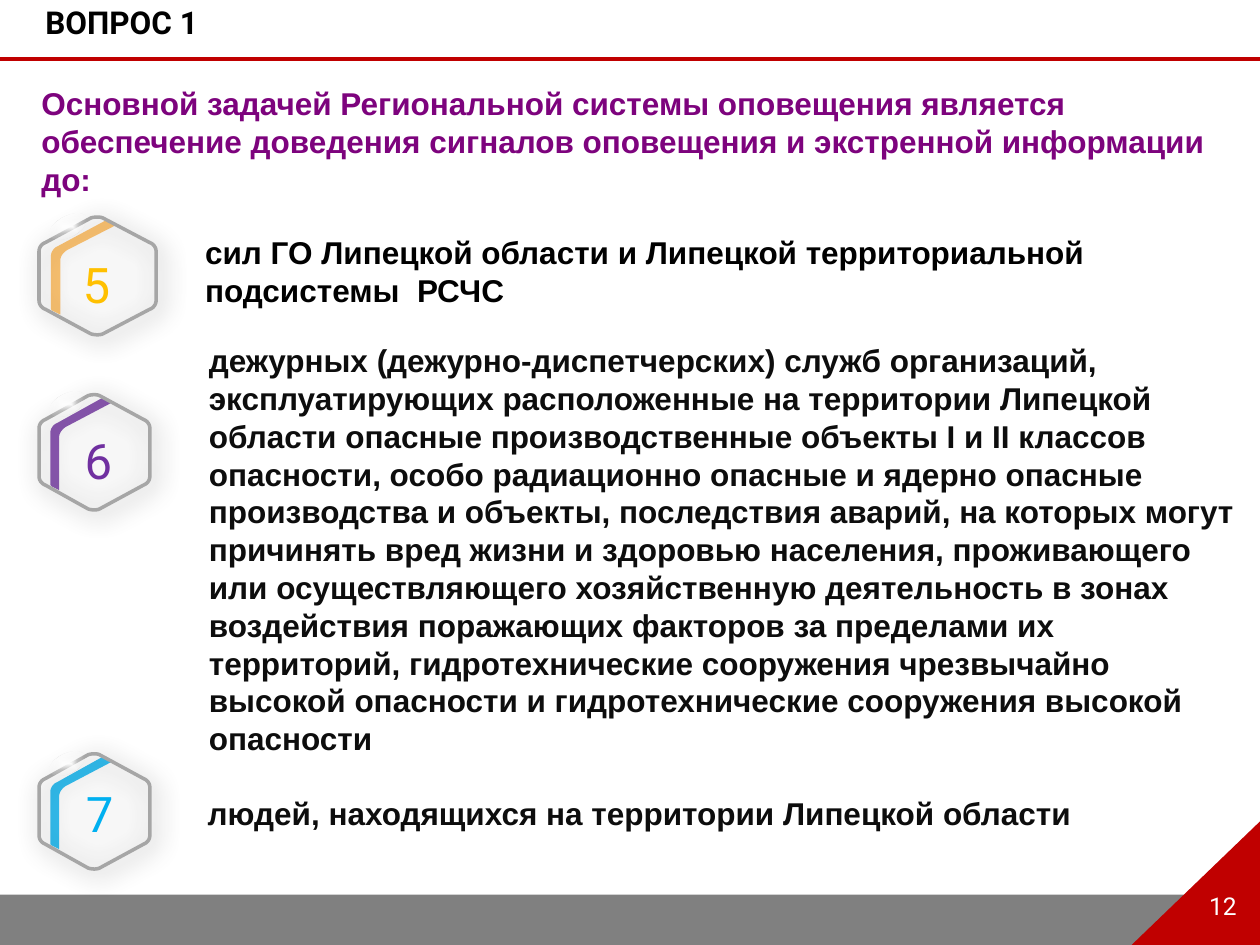
from dataclasses import dataclass
from typing import Any

from pptx import Presentation
from pptx.dml.color import RGBColor as RGB
from pptx.enum.shapes import MSO_CONNECTOR as CONNECTOR, MSO_SHAPE as SHAPE
from pptx.enum.text import MSO_AUTO_SIZE as AUTO_SIZE, PP_ALIGN as ALIGN
from pptx.oxml import parse_xml
from pptx.oxml.ns import nsdecls, qn
from pptx.util import Inches, Pt

COLORS = {
    "white": "FFFFFF", "black": "000000", "ink": "0D0D0D", "grey": "808080",
    "outline": "A6A6A6", "red": "C00000", "heading": "7D037D",
    "orange": "FFB850", "amber": "FFC000", "violet": "7030A0", "blue": "00B0F0",
}
BADGE_WIDTH, BADGE_HEIGHT = 0.88, 0.92
HEXAGON = [
    [(0.88, 0.65), (0.88, 0.68), (0.86, 0.71), (0.83, 0.72)],
    [(0.48, 0.91), (0.46, 0.92), (0.42, 0.92), (0.39, 0.91)],
    [(0.05, 0.72), (0.02, 0.71), (0, 0.68), (0, 0.65)],
    [(0, 0.27), (0, 0.24), (0.02, 0.21), (0.05, 0.2)],
    [(0.39, 0.01), (0.42, 0), (0.46, 0), (0.48, 0.01)],
    [(0.83, 0.2), (0.86, 0.21), (0.88, 0.24), (0.88, 0.27)],
]
RIBBON = [
    [(0.52, 0.02)], [(0.59, 0.06)], [(0.57, 0.07)],
    [(0.21, 0.26), (0.18, 0.28), (0.16, 0.31), (0.16, 0.34)],
    [(0.16, 0.76)], [(0.1, 0.73)], [(0.09, 0.72)],
    [(0.09, 0.3), (0.09, 0.28), (0.11, 0.24), (0.14, 0.23)],
    [(0.5, 0.03)],
]
GLOSS_STOPS = [(0, 100), (35, 30), (72, 2), (100, 0)]


def trace(pieces, steps=6):
    """Turn single points and four-point Bezier corners into one list of points."""
    points = []
    for piece in pieces:
        if len(piece) == 1:
            points += piece
            continue
        for step in range(steps + 1):
            t = step / steps
            weights = [(1 - t) ** 3, 3 * t * (1 - t) ** 2, 3 * t * t * (1 - t), t ** 3]
            points.append(tuple(sum(w * point[axis] for w, point in zip(weights, piece))
                                for axis in (0, 1)))
    return points


@dataclass
class Painter:
    """Holds the style and the current page, and draws each kind of element."""
    page: Any
    body_font: str = "Arial"
    label_font: str = "Roboto"
    size: float = 18

    def paint(self, shape, color, alpha=None, outline=None):
        shape.shadow.inherit = False
        shape.fill.solid()
        shape.fill.fore_color.rgb = RGB.from_string(COLORS[color])
        if alpha is not None:
            tint = shape._element.spPr.find(qn("a:solidFill"))[0]
            tint.append(parse_xml(f'<a:alpha {nsdecls("a")} val="{alpha * 1000}"/>'))
        if outline:
            shape.line.color.rgb = RGB.from_string(COLORS[outline])
            shape.line.width = Pt(2)
        else:
            shape.line.fill.background()
        return shape

    def bar(self, left, top, width, height, color):
        box = self.page.shapes.add_shape(
            SHAPE.RECTANGLE, Inches(left), Inches(top), Inches(width), Inches(height))
        return self.paint(box, color)

    def outline(self, points, color, **style):
        corners = [(Inches(x), Inches(y)) for x, y in points]
        builder = self.page.shapes.build_freeform(*corners[0])
        builder.add_line_segments(corners[1:], close=True)
        return self.paint(builder.convert_to_shape(), color, **style)

    def rule(self, left, top, right, color, width):
        line = self.page.shapes.add_connector(
            CONNECTOR.STRAIGHT, Inches(left), Inches(top), Inches(right), Inches(top))
        line.line.color.rgb = RGB.from_string(COLORS[color])
        line.line.width = Pt(width)
        line._element.spPr.append(parse_xml(f'<a:effectLst {nsdecls("a")}/>'))

    def text(self, words, left, top, width, height, color, font=None, size=None,
             bold=True, align=None, margins=None, spacing=None):
        box = self.page.shapes.add_textbox(
            Inches(left), Inches(top), Inches(width), Inches(height))
        frame = box.text_frame
        frame.word_wrap = True
        frame.auto_size = AUTO_SIZE.SHAPE_TO_FIT_TEXT
        if margins:
            (frame.margin_left, frame.margin_top,
             frame.margin_right, frame.margin_bottom) = map(Inches, margins)
        para = frame.paragraphs[0]
        para.text = words
        para.alignment = align
        if spacing:
            para.line_spacing = Pt(spacing)
        para.font.name = font or self.body_font
        para.font.size = Pt(size or self.size)
        para.font.bold = bold
        para.font.color.rgb = RGB.from_string(COLORS[color])

    def gloss(self, left, top, width, height):
        shine = self.page.shapes.add_shape(
            SHAPE.OVAL, Inches(left), Inches(top), Inches(width), Inches(height))
        self.paint(shine, "white")
        shine.rotation = 333.3
        stops = "".join(
            f'<a:gs pos="{place * 1000}"><a:srgbClr val="{COLORS["white"]}">'
            f'<a:alpha val="{alpha * 1000}"/></a:srgbClr></a:gs>'
            for place, alpha in GLOSS_STOPS)
        gradient = parse_xml(
            f'<a:gradFill {nsdecls("a")}><a:gsLst>{stops}</a:gsLst><a:path path="shape">'
            '<a:fillToRect l="50000" t="50000" r="50000" b="50000"/></a:path></a:gradFill>')
        props = shine._element.spPr
        props.replace(props.find(qn("a:solidFill")), gradient)

    def badge(self, number, left, top, width, height, ribbon, digit, digit_box):
        def place(pieces, shift=0):
            return [(left + shift + x * width / BADGE_WIDTH,
                     top + shift + y * height / BADGE_HEIGHT) for x, y in trace(pieces)]

        self.outline(place(RIBBON), ribbon)
        self.outline(place(HEXAGON, 0.01), "white", alpha=13)
        frame = self.outline(place(HEXAGON), "white", alpha=8, outline="outline")
        frame._element.spPr.find(qn("a:effectLst")).append(parse_xml(
            f'<a:outerShdw {nsdecls("a")} blurRad="{Pt(15)}" dist="{Pt(4)}" dir="2700000">'
            f'<a:srgbClr val="{COLORS["black"]}"><a:alpha val="40000"/></a:srgbClr>'
            '</a:outerShdw>'))
        self.gloss(left + 0.07, top, width * 0.34, 0.16)
        self.text(number, *digit_box, digit, font=self.label_font, size=28,
                  bold=False, align=ALIGN.CENTER)


def main():
    deck = Presentation()
    deck.slide_width, deck.slide_height = Inches(10), Inches(7.5)
    painter = Painter(deck.slides.add_slide(deck.slide_layouts[6]))

    painter.bar(0, 7.1, 10, 0.43, "grey")
    painter.rule(0, 0.47, 10, "red", 2.34)
    painter.outline([(10.01, 6.51), (8.95, 7.53), (10.01, 7.53)], "red")
    painter.text("12", 9.42, 7.11, 0.55, 0.2, "white", font=painter.label_font, size=14,
                 bold=False, align=ALIGN.CENTER, margins=(0.02, 0, 0, 0), spacing=13.9)
    painter.text("ВОПРОС 1", 0.23, 0, 3.26, 0.31, "black", font=painter.label_font,
                 margins=(0.13, 0.02, 0, 0))
    painter.text("Основной задачей Региональной системы оповещения является обеспечение "
                 "доведения сигналов оповещения и экстренной информации до:",
                 0.23, 0.62, 9.57, 1.01, "heading")

    painter.badge("5", 0.31, 1.72, 0.93, 0.94, "orange", "amber", (0.49, 1.97, 0.55, 0.57))
    painter.badge("6", 0.31, 3.13, 0.88, 0.92, "violet", "violet", (0.52, 3.37, 0.52, 0.57))
    painter.badge("7", 0.31, 5.98, 0.88, 0.92, "blue", "blue", (0.53, 6.17, 0.52, 0.57))

    painter.text("сил ГО Липецкой области и Липецкой территориальной подсистемы  РСЧС",
                 1.53, 1.8, 8.47, 0.71, "black")
    painter.text("дежурных (дежурно-диспетчерских) служб организаций, эксплуатирующих "
                 "расположенные на территории Липецкой области опасные производственные "
                 "объекты I и II классов опасности, особо радиационно опасные и ядерно "
                 "опасные производства и объекты, последствия аварий, на которых могут "
                 "причинять вред жизни и здоровью населения, проживающего или "
                 "осуществляющего хозяйственную деятельность в зонах воздействия "
                 "поражающих факторов за пределами их территорий, гидротехнические "
                 "сооружения чрезвычайно высокой опасности и гидротехнические сооружения "
                 "высокой опасности", 1.56, 2.66, 8.44, 3.43, "ink")
    painter.text("людей, находящихся на территории Липецкой области",
                 1.55, 6.25, 8.45, 0.4, "ink")
    deck.save("out.pptx")


if __name__ == "__main__":
    main()
